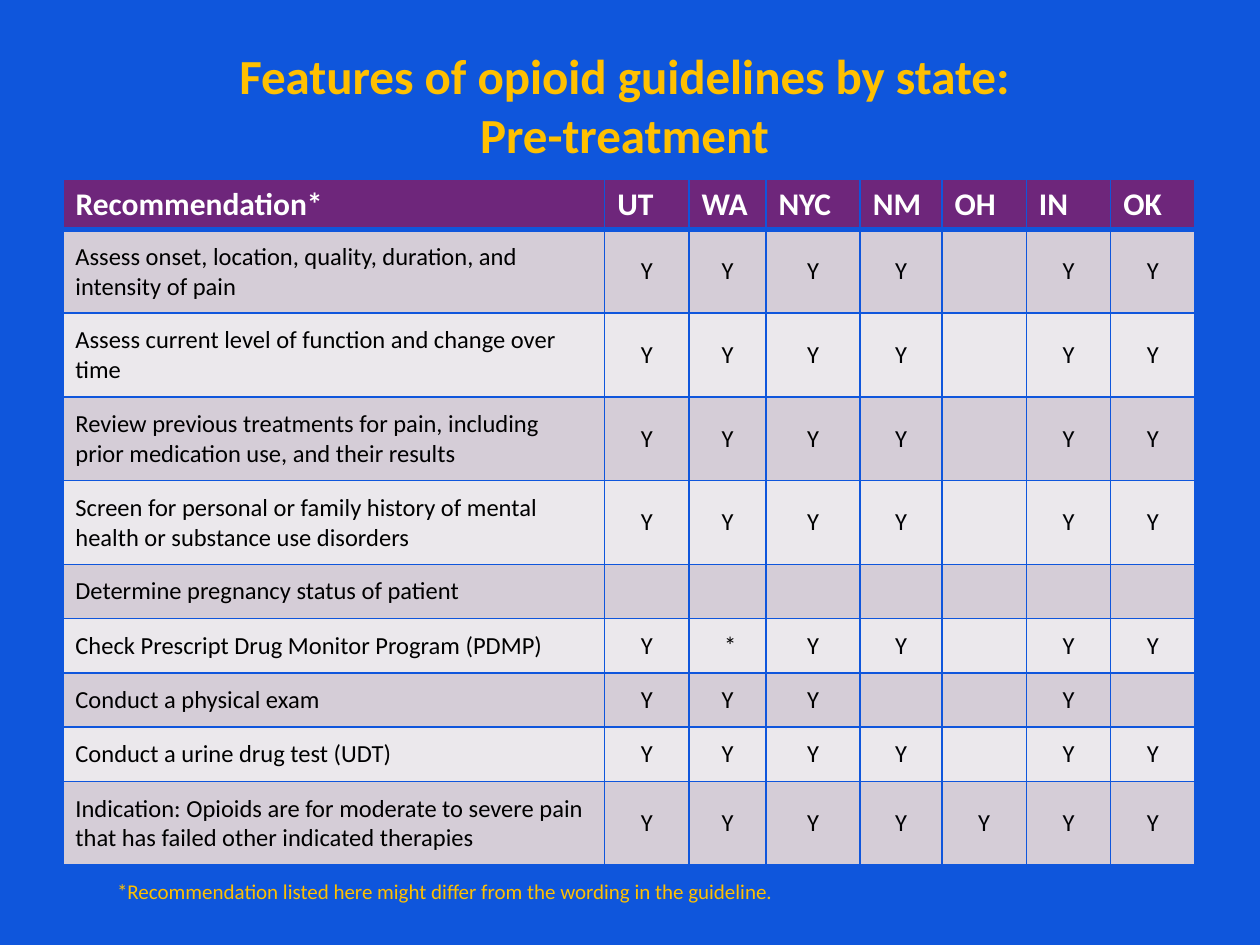
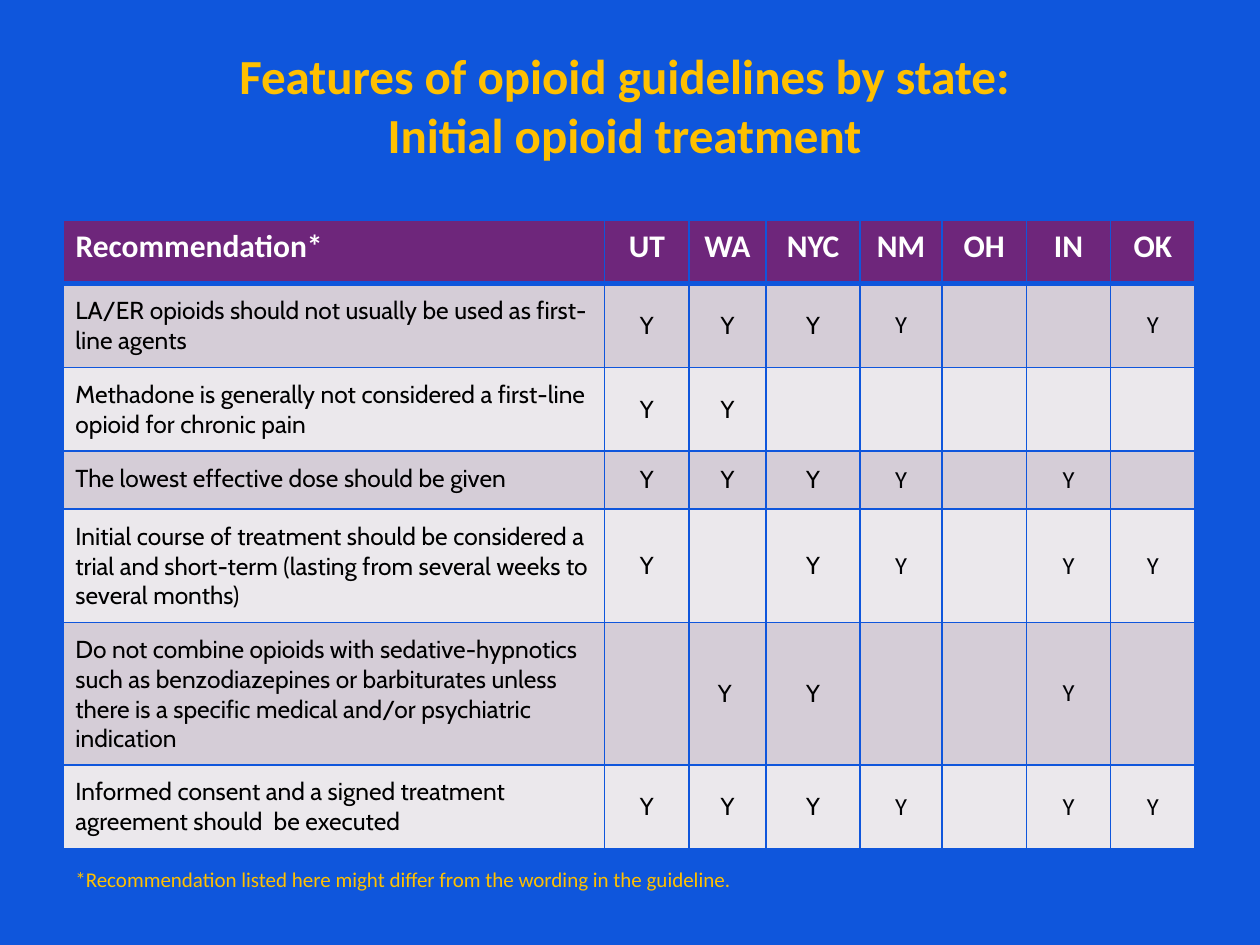
from lxml import etree
from pptx import Presentation
from pptx.dml.color import RGBColor
from pptx.enum.text import MSO_ANCHOR, PP_ALIGN
from pptx.oxml.ns import qn
from pptx.util import Cm, Pt

LEFT, CENTER = PP_ALIGN.LEFT, PP_ALIGN.CENTER
TOP, MIDDLE = MSO_ANCHOR.TOP, MSO_ANCHOR.MIDDLE

# Shared look
BLUE, GOLD, PURPLE = "0F56DC", "FFC000", "6E267B"
WHITE, BLACK, NEAR_BLACK = "FFFFFF", "000000", "000104"
BANDS = ("D5CDD7", "EBE8EC")
FONT = "Calibri"
THIN, THICK = 1, 3
MARGIN = 1.27
COLUMN_WIDTHS = (10.92, 1.7, 1.55, 1.9, 1.65, 1.7, 1.7, 1.7)
TIGHT_STATES = 3  # the first states have marks without cell margins

# Content
TITLE = "Features of opioid guidelines by state: "
FOOTNOTE = "*Recommendation listed here might differ from the wording in the guideline."
HEADER = ("Recommendation*", "UT", "WA", "NYC", "NM", "OH", "IN", "OK")

# Each recommendation: wording, marks by state, row height
PAGES = [
    {
        "subtitle": "Pre-treatment ",
        "table_top": 3.61,
        "header_height": 0.94,
        "header_align": LEFT,
        "body_font": "Calibri",
        "footnote_box": (2.11, 17.58, 20.96, 0.76),
        "recommendations": [
            ("Assess onset, location, quality, duration, and intensity of pain",
             "Y,Y,Y,Y,,Y,Y", 1.55),
            ("Assess current level of function and change over time",
             "Y,Y,Y,Y,,Y,Y", 1.55),
            ("Review previous treatments for pain, including prior medication use, "
             "and their results", "Y,Y,Y,Y,,Y,Y", 1.55),
            ("Screen for personal or family history of mental health or substance "
             "use disorders", "Y,Y,Y,Y,,Y,Y", 1.55),
            ("Determine pregnancy status of patient", ",,,,,,", 1.02),
            ("Check Prescript Drug Monitor Program (PDMP)", "Y, *,Y,Y,,Y,Y", 1.02),
            ("Conduct a physical exam", "Y,Y,Y,,,Y,", 1.02),
            ("Conduct a urine drug test (UDT)", "Y,Y,Y,Y,,Y,Y", 1.02),
            ("Indication: Opioids are for moderate to severe pain that has failed "
             "other indicated therapies", "Y,Y,Y,Y,Y,Y,Y", 1.55),
        ],
    },
    {
        "subtitle": "Initial opioid treatment ",
        "table_top": 4.45,
        "header_height": 1.27,
        "header_align": CENTER,
        "body_font": "Cabin",
        "footnote_box": (MARGIN, 17.35, 23.29, 0.76),
        "recommendations": [
            ("LA/ER opioids should not usually be used as first-line agents",
             "Y,Y,Y,Y,,,Y", 1.52),
            ("Methadone is generally not considered a first-line opioid for chronic pain",
             "Y,Y,,,,,", 1.52),
            ("The lowest effective dose should be given", "Y,Y,Y,Y,,Y,", 1.17),
            ("Initial course of treatment should be considered a trial and short-term "
             "(lasting from several weeks to several months)", "Y,,Y,Y,,Y,Y", 2.06),
            ("Do not combine opioids with sedative-hypnotics such as benzodiazepines "
             "or barbiturates unless there is a specific medical and/or psychiatric "
             "indication", ",Y ,Y,,,Y,", 2.59),
            ("Informed consent and a signed treatment agreement should  be executed",
             "Y,Y,Y,Y,,Y,Y", 1.52),
        ],
    },
]


def color(value):
    return RGBColor.from_string(value)


def write(frame, text, size, ink, font=FONT, bold=False, align=LEFT):
    para = frame.paragraphs[0]
    para.text = text
    para.alignment = align
    for target in (para, *para.runs):
        target.font.name = font
        target.font.size = Pt(size)
        target.font.bold = bold
        target.font.color.rgb = color(ink)


def add_text(page, place, text, size, **style):
    box = page.shapes.add_textbox(*map(Cm, place))
    box.text_frame.word_wrap = True
    write(box.text_frame, text, size, GOLD, **style)


def set_margins(cell, size):
    cell.margin_left = cell.margin_right = Cm(size)
    cell.margin_top = cell.margin_bottom = Cm(size)


def paint(cell, fill, top=THIN, bottom=THIN):
    """Draw the cell borders, then its fill."""
    properties = cell._tc.get_or_add_tcPr()
    for side, width in (("L", THIN), ("R", THIN), ("T", top), ("B", bottom)):
        line = etree.SubElement(properties, qn(f"a:ln{side}"), w=str(Pt(width)))
        solid = etree.SubElement(line, qn("a:solidFill"))
        etree.SubElement(solid, qn("a:srgbClr"), val=BLUE)
    cell.fill.solid()
    cell.fill.fore_color.rgb = color(fill)


def add_guideline_table(page, content):
    recommendations = content["recommendations"]
    heights = [content["header_height"], *(item[2] for item in recommendations)]
    place = (MARGIN, content["table_top"], sum(COLUMN_WIDTHS), sum(heights))
    table = page.shapes.add_table(len(heights), len(HEADER), *map(Cm, place)).table
    for column, width in zip(table.columns, COLUMN_WIDTHS):
        column.width = Cm(width)
    for row, height in zip(table.rows, heights):
        row.height = Cm(height)

    # Header row
    for index, label in enumerate(HEADER):
        cell = table.cell(0, index)
        paint(cell, PURPLE, bottom=THICK)
        align = content["header_align"] if index else LEFT
        write(cell.text_frame, label, 18, WHITE, bold=True, align=align)

    # Recommendation rows
    for number, (wording, marks, _) in enumerate(recommendations, 1):
        for index, text in enumerate((wording, *marks.split(","))):
            cell = table.cell(number, index)
            paint(cell, BANDS[(number - 1) % 2], top=THICK if number == 1 else THIN)
            tight = index <= TIGHT_STATES
            if tight:
                set_margins(cell, 0 if index else 0.25)
            cell.vertical_anchor = MIDDLE if index else TOP
            write(cell.text_frame, text, 14, BLACK if tight else NEAR_BLACK,
                  font=content["body_font"] if tight else FONT,
                  align=CENTER if index else LEFT)


def main():
    deck = Presentation()
    deck.slide_width, deck.slide_height = Cm(25.4), Cm(19.05)
    for content in PAGES:
        page = deck.slides.add_slide(deck.slide_layouts[6])
        page.background.fill.solid()
        page.background.fill.fore_color.rgb = color(BLUE)
        add_text(page, (MARGIN, 0.8, 22.86, 3.18), TITLE + "\v" + content["subtitle"],
                 28, bold=True, align=CENTER)
        add_guideline_table(page, content)
        add_text(page, content["footnote_box"], FOOTNOTE, 12)
    deck.save("out.pptx")


if __name__ == "__main__":
    main()
